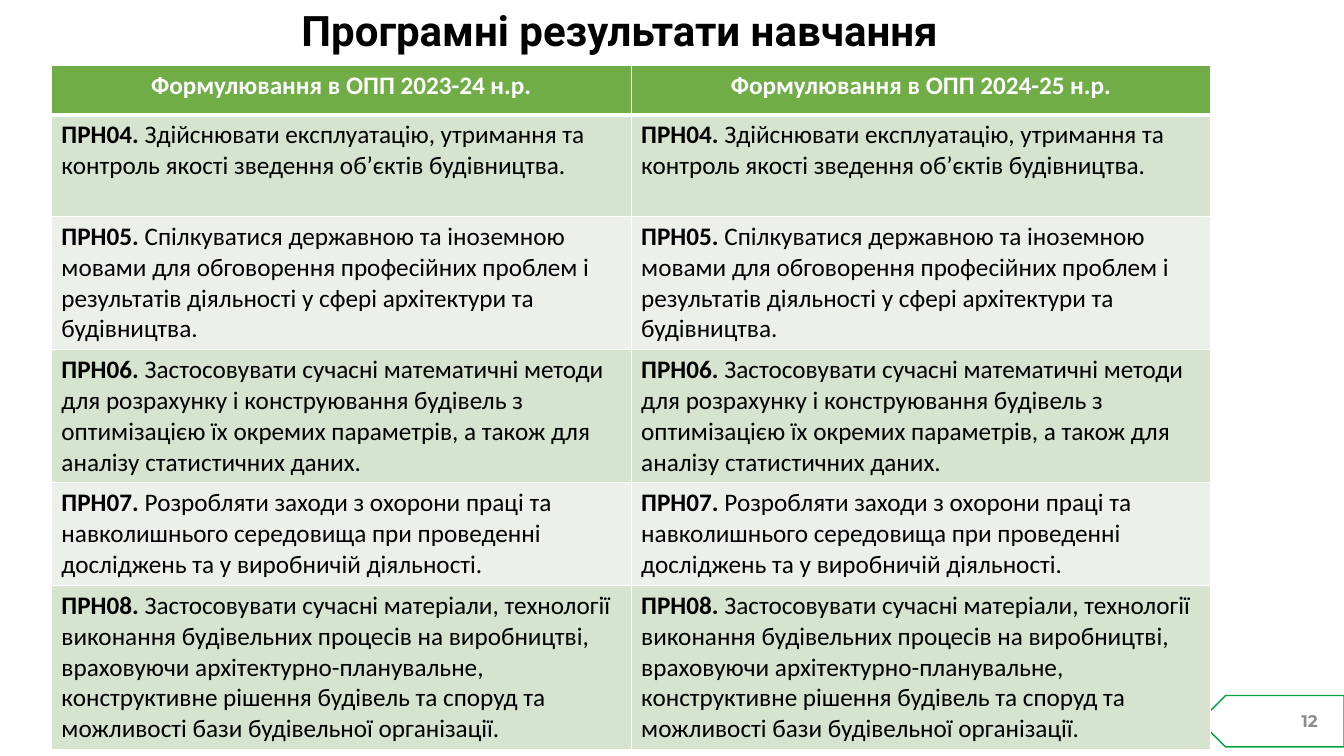
from lxml import etree
from pptx import Presentation
from pptx.dml.color import RGBColor
from pptx.enum.shapes import MSO_SHAPE
from pptx.enum.text import MSO_ANCHOR, PP_ALIGN
from pptx.oxml.ns import qn
from pptx.util import Inches, Pt

WHITE = RGBColor(0xFF, 0xFF, 0xFF)
BLACK = RGBColor(0, 0, 0)
GREY = RGBColor(0x8C, 0x8C, 0x8C)
GREEN_LINE = RGBColor(0x01, 0xA3, 0x3C)
HEADER_GREEN = RGBColor(0x70, 0xAD, 0x47)
BANDS = [RGBColor(0xD5, 0xE3, 0xCF), RGBColor(0xEB, 0xF1, 0xE9)]

HEADERS = ["Формулювання в ОПП 2023-24 н.р.", "Формулювання в ОПП 2024-25 н.р."]
# Code, wording (the same in both years), row height
OUTCOMES = [
    ("ПРН04.", "Здійснювати експлуатацію, утримання та контроль якості зведення "
     "об’єктів будівництва.", 1.01),
    ("ПРН05.", "Cпілкуватися державною та іноземною мовами для обговорення "
     "професійних проблем і результатів діяльності у сфері архітектури та "
     "будівництва.", 1.32),
    ("ПРН06.", "Застосовувати сучасні математичні методи для розрахунку і "
     "конструювання будівель з оптимізацією їх окремих параметрів, а також для "
     "аналізу статистичних даних.", 1.32),
    ("ПРН07.", "Розробляти заходи з охорони праці та навколишнього середовища при "
     "проведенні досліджень та у виробничій діяльності.", 1.02),
    ("ПРН08.", "Застосовувати сучасні матеріали, технології виконання будівельних "
     "процесів на виробництві, враховуючи архітектурно-планувальне, конструктивне "
     "рішення будівель та споруд та можливості бази будівельної організації.", 1.63),
]
HEADER_HEIGHT = 0.49


def add_text(p, text, size=18, font="Calibri", color=BLACK, bold=False, align=PP_ALIGN.LEFT):
    p.alignment = align
    r = p.add_run()
    r.text = text
    r.font.size = Pt(size)
    r.font.name = font
    r.font.bold = bold
    r.font.color.rgb = color


def set_borders(cell, bottom=1, top=1):
    tcPr = cell._tc.get_or_add_tcPr()
    widths = [("a:lnL", 1), ("a:lnR", 1), ("a:lnT", top), ("a:lnB", bottom)]
    for i, (tag, width) in enumerate(widths):
        ln = etree.Element(qn(tag), w=str(Pt(width)))
        fill = etree.SubElement(ln, qn("a:solidFill"))
        etree.SubElement(fill, qn("a:srgbClr"), val=str(WHITE))
        tcPr.insert(i, ln)


def style_cell(cell, color, **borders):
    cell.fill.solid()
    cell.fill.fore_color.rgb = color
    set_borders(cell, **borders)


def add_title(slide, left, top, width, height):
    sp = slide.shapes.title
    sp.left, sp.top, sp.width, sp.height = map(Inches, (left, top, width, height))
    tf = sp.text_frame
    tf.vertical_anchor = MSO_ANCHOR.MIDDLE
    p = tf.paragraphs[0]
    p.line_spacing = 0.9
    add_text(p, "Програмні результати навчання", size=30, font="Roboto", bold=True)


def add_page_number(slide, left, top, width, height):
    # Arrow tag pointing left
    sp = slide.shapes.add_shape(MSO_SHAPE.PENTAGON, Inches(left), Inches(top),
                                Inches(width), Inches(height))
    sp.rotation = 180
    sp.shadow.inherit = False
    sp.fill.solid()
    sp.fill.fore_color.rgb = WHITE
    sp.line.color.rgb = GREEN_LINE
    sp.line.width = Pt(1)
    # Number, right-aligned inside the tag
    box = slide.shapes.add_textbox(Inches(left + width - 3.16), Inches(top + 0.05),
                                   Inches(3), Inches(0.4))
    tf = box.text_frame
    tf.word_wrap = True
    tf.vertical_anchor = MSO_ANCHOR.MIDDLE
    add_text(tf.paragraphs[0], "12", size=12, font="Montserrat", color=GREY,
             bold=True, align=PP_ALIGN.RIGHT)


def add_outcomes_table(slide, left, top, width):
    heights = [HEADER_HEIGHT] + [height for _, _, height in OUTCOMES]
    table = slide.shapes.add_table(len(heights), len(HEADERS), Inches(left), Inches(top),
                                   Inches(width), Inches(sum(heights))).table
    for row, height in zip(table.rows, heights):
        row.height = Inches(height)
    for col, header in enumerate(HEADERS):
        table.columns[col].width = Inches(width / len(HEADERS))
        # Header
        cell = table.cell(0, col)
        style_cell(cell, HEADER_GREEN, bottom=3)
        add_text(cell.text_frame.paragraphs[0], header, color=WHITE, bold=True,
                 align=PP_ALIGN.CENTER)
        # Learning outcomes
        for i, (code, wording, _) in enumerate(OUTCOMES):
            cell = table.cell(i + 1, col)
            style_cell(cell, BANDS[i % 2], top=3 if i == 0 else 1)
            p = cell.text_frame.paragraphs[0]
            add_text(p, code + " ", bold=True)
            add_text(p, wording)


def main():
    prs = Presentation()
    prs.slide_width, prs.slide_height = Inches(13.33), Inches(7.5)
    slide = prs.slides.add_slide(prs.slide_layouts[5])
    add_title(slide, 2.89, -0.4, 11.5, 1.45)
    add_page_number(slide, 11.9, 6.9, 1.43, 0.51)
    add_outcomes_table(slide, 0.51, 0.65, 11.5)
    prs.save("out.pptx")


if __name__ == "__main__":
    main()
